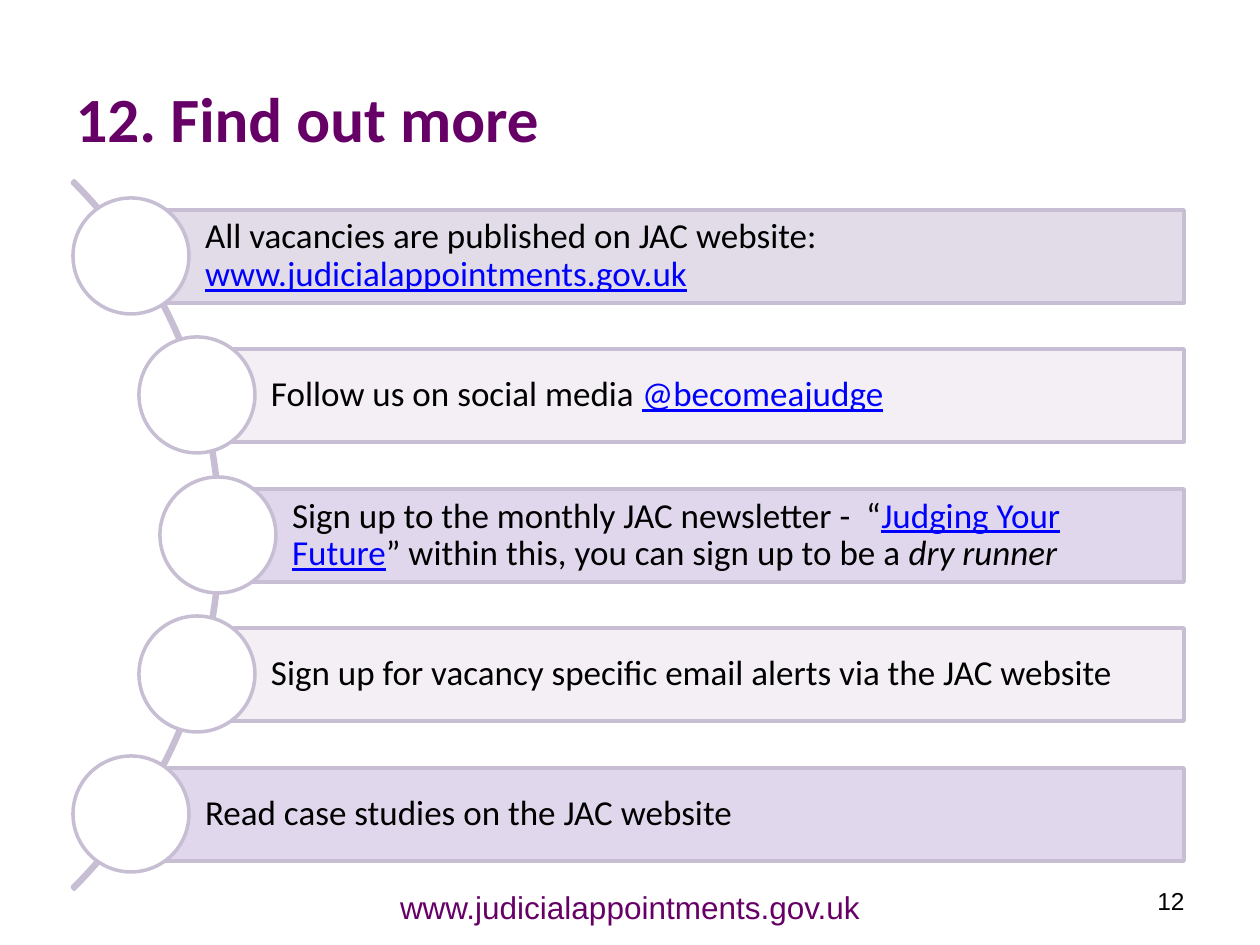
"""Build the 'Find out more' slide: five link bars with circles along an arc."""
from pptx import Presentation
from pptx.dml.color import RGBColor
from pptx.enum.shapes import MSO_SHAPE
from pptx.enum.text import MSO_ANCHOR, MSO_AUTO_SIZE, PP_ALIGN
from pptx.util import Emu, Pt

EMU_PER_PX = 914400 / 126
PURPLE, LILAC, BLACK, LINK = "660066", "C7BED4", "000000", "0000FF"
CIRCLE, BAR_HEIGHT, BAR_RIGHT = 116, 93, 1184
ARC_LEFT, ARC_SIZE, ARC_MIDDLE = -781, 1002, 535
ROWS = [
    (131, "E1DCE8", [("All vacancies are published on JAC website: ", ""),
                     ("www.judicialappointments.gov.uk", "link")]),
    (197, "F3EFF5", [("Follow us on social media ", ""), ("@becomeajudge", "link")]),
    (218, "E0D7ED", [("Sign up to the monthly JAC newsletter -  “", ""),
                     ("Judging Your Future", "link"),
                     ("” within this, you can sign up to be a ", ""),
                     ("dry runner", "italic")]),
    (197, "F3EFF5", [("Sign up for vacancy specific email alerts via the JAC website", "")]),
    (131, "E0D7ED", [("Read case studies on the JAC website", "")]),
]


def px(*lengths):
    """Turn pixel lengths into a list of EMU lengths."""
    return [Emu(round(n * EMU_PER_PX)) for n in lengths]


def color(hex_text):
    """Turn a hex string into a colour."""
    return RGBColor.from_string(hex_text)


def add_run(p, text, size, font, hex_text):
    """Add one formatted run and return it."""
    r = p.add_run()
    r.text = text
    r.font.size = Pt(size)
    r.font.name = font
    r.font.color.rgb = color(hex_text)
    return r


def add_title(s, text):
    """Place and format the title placeholder."""
    sp = s.shapes.title
    sp.left, sp.top, sp.width, sp.height = px(63, 38, 1134, 158)
    tf = sp.text_frame
    tf.auto_size = MSO_AUTO_SIZE.NONE
    tf.vertical_anchor = MSO_ANCHOR.MIDDLE
    p = tf.paragraphs[0]
    p.alignment = PP_ALIGN.LEFT
    add_run(p, text, 36, "Calibri", PURPLE).font.bold = True


def add_outlined(s, kind, box, fill=None):
    """Add a preset shape with a lilac outline and an optional fill."""
    sp = s.shapes.add_shape(kind, *px(*box))
    sp.shadow.inherit = False
    sp.line.color.rgb = color(LILAC)
    sp.line.width = Pt(2)
    if fill:
        sp.fill.solid()
        sp.fill.fore_color.rgb = color(fill)
    else:
        sp.fill.background()
    return sp


def add_arc(s):
    """Add the thin arc that joins the circles."""
    box = (ARC_LEFT, ARC_MIDDLE - ARC_SIZE // 2, ARC_SIZE, ARC_SIZE)
    sp = add_outlined(s, MSO_SHAPE.BLOCK_ARC, box)
    for i, value in enumerate((189, 27, 0.003)):
        sp.adjustments[i] = value


def add_row(s, x, y, fill, runs):
    """Add a text bar with its circle, the circle centred on x, y."""
    bar = (x, y - BAR_HEIGHT // 2, BAR_RIGHT - x, BAR_HEIGHT)
    tf = add_outlined(s, MSO_SHAPE.RECTANGLE, bar, fill).text_frame
    tf.word_wrap = True
    tf.vertical_anchor = MSO_ANCHOR.MIDDLE
    tf.margin_left, tf.margin_top, tf.margin_right, tf.margin_bottom = px(74, 8, 8, 8)
    p = tf.paragraphs[0]
    p.alignment = PP_ALIGN.LEFT
    p.line_spacing = 0.9
    for text, style in runs:
        r = add_run(p, text, 20, "Calibri", LINK if style == "link" else BLACK)
        if style == "link":
            r.font.underline = True
        elif style == "italic":
            r.font.italic = True
    circle = (x - CIRCLE // 2, y - CIRCLE // 2, CIRCLE, CIRCLE)
    add_outlined(s, MSO_SHAPE.OVAL, circle, "FFFFFF")


def add_label(s, box, text, size, hex_text, align, anchor, wrap):
    """Add a one-line text box."""
    tf = s.shapes.add_textbox(*px(*box)).text_frame
    tf.word_wrap = wrap
    tf.vertical_anchor = anchor
    p = tf.paragraphs[0]
    p.alignment = align
    add_run(p, text, size, "Arial", hex_text)


def main():
    """Build and save the slide."""
    prs = Presentation()
    prs.slide_width, prs.slide_height = px(1260, 945)
    s = prs.slides.add_slide(prs.slide_layouts[5])
    add_title(s, "12. Find out more")
    add_label(s, (903, 876, 294, 50), "12", 14, BLACK,
              PP_ALIGN.RIGHT, MSO_ANCHOR.MIDDLE, True)
    add_arc(s)
    for i, (x, fill, runs) in enumerate(ROWS):
        add_row(s, x, ARC_MIDDLE + (i - 2) * 279 // 2, fill, runs)
    add_label(s, (385, 882, 490, 50), "www.judicialappointments.gov.uk", 18, PURPLE,
              PP_ALIGN.CENTER, MSO_ANCHOR.TOP, False)
    prs.save("out.pptx")


if __name__ == "__main__":
    main()
